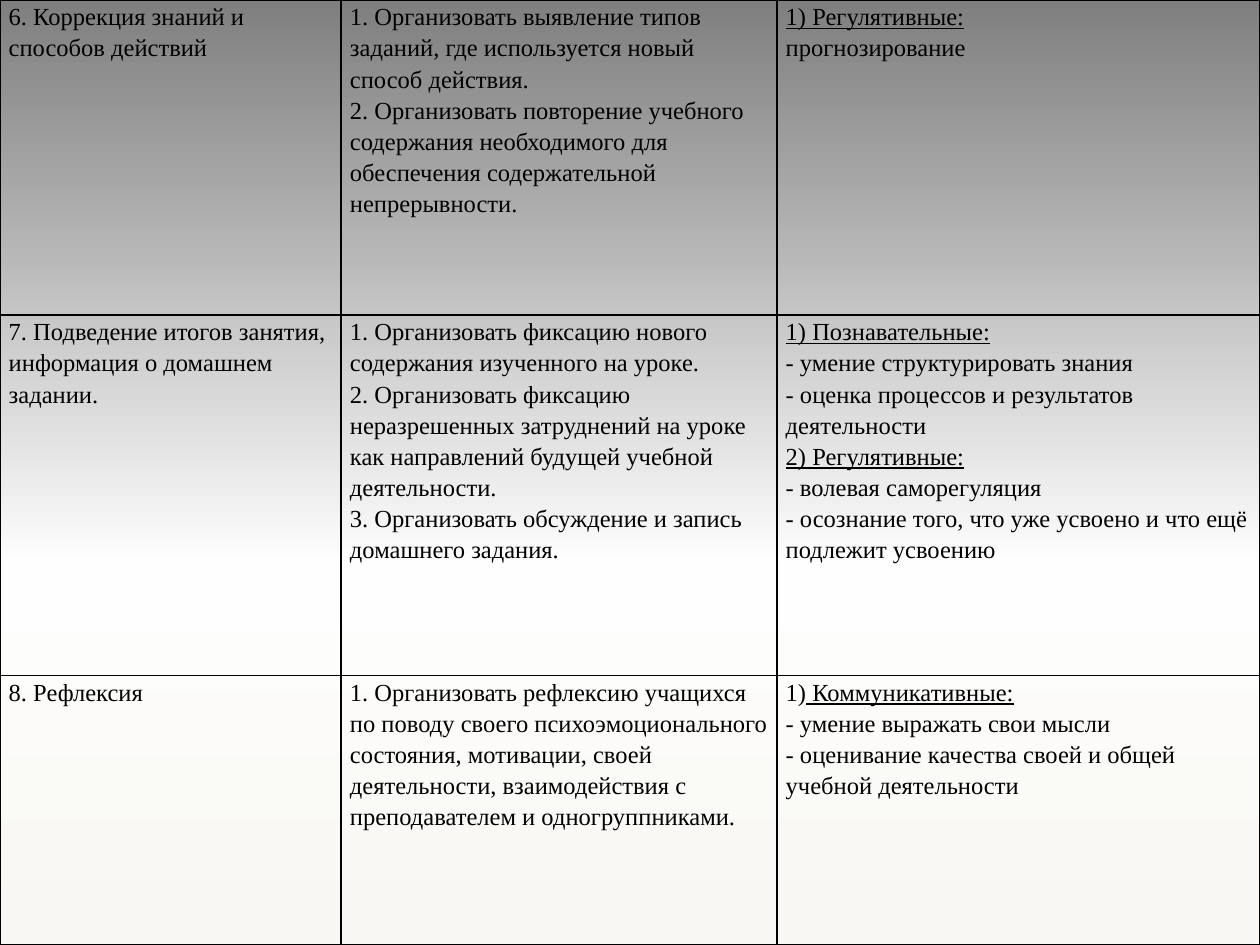
"""Builds a slide with a table of lesson stages, tasks and learning skills."""
from copy import deepcopy
from dataclasses import dataclass

from pptx import Presentation
from pptx import util as u
from pptx.dml.color import RGBColor
from pptx.oxml import parse_xml
from pptx.oxml.ns import nsdecls, qn

COLORS = {"text": "000000", "border": "000000",
          "bottom": "F8F7F3", "middle": "FEFEFE", "top": "7F7F7F"}
GRADIENT = [(0, "bottom"), (0.4, "middle"), (1, "top")]
COLUMN_WIDTHS = [195, 249, 276]
ROW_HEIGHTS = [180, 206, 154]
CELL_FORMAT = {"margin_left": u.Pt(5), "margin_right": u.Pt(5),
               "margin_top": u.Pt(0), "margin_bottom": u.Pt(0)}
FONT_FORMAT = {"name": "Times New Roman", "size": u.Pt(14)}


@dataclass
class Span:
    text: str
    underline: bool = False


@dataclass
class Stage:
    name: str
    tasks: list[str]
    skills: list[list[Span]]


def plain(text: str) -> list[Span]:
    return [Span(text)]


def heading(text: str) -> list[Span]:
    return [Span(text, True)]


STAGES = [
    Stage("6. Коррекция знаний и способов действий",
          ["1. Организовать выявление типов заданий, где используется новый способ действия.",
           "2. Организовать повторение учебного содержания необходимого для обеспечения "
           "содержательной непрерывности."],
          [heading("1) Регулятивные:"), plain("прогнозирование")]),
    Stage("7. Подведение итогов занятия, информация о домашнем задании.",
          ["1. Организовать фиксацию нового содержания изученного на уроке.",
           "2. Организовать фиксацию неразрешенных затруднений на уроке как направлений "
           "будущей учебной деятельности.",
           "3. Организовать обсуждение и запись домашнего задания."],
          [heading("1) Познавательные:"),
           plain("- умение структурировать знания"),
           plain("- оценка процессов и результатов деятельности"),
           heading("2) Регулятивные:"),
           plain("- волевая саморегуляция"),
           plain("- осознание того, что уже усвоено и что ещё подлежит усвоению")]),
    Stage("8. Рефлексия",
          ["1. Организовать рефлексию учащихся по поводу своего психоэмоционального "
           "состояния, мотивации, своей деятельности, взаимодействия с преподавателем "
           "и одногруппниками."],
          [[Span("1)"), Span(" Коммуникативные:", True)],
           plain("- умение выражать свои мысли"),
           plain("- оценивание качества своей и общей учебной деятельности")]),
]


def apply_format(target, values: dict) -> None:
    for name, value in values.items():
        setattr(target, name, value)


def paint_background(page) -> None:
    fill = page.background.fill
    fill.gradient()
    fill.gradient_angle = 90
    stop_list = page.element.find(".//" + qn("a:gsLst"))
    stop_list.append(deepcopy(stop_list[-1]))
    for stop, (position, color) in zip(fill.gradient_stops, GRADIENT):
        stop.position = position
        stop.color.rgb = RGBColor.from_string(COLORS[color])


def draw_borders(cell, width: int = 1) -> None:
    properties = cell._tc.get_or_add_tcPr()
    for side in "LRTB":
        properties.append(parse_xml(
            f'<a:ln{side} {nsdecls("a")} w="{u.Pt(width)}"><a:solidFill>'
            f'<a:srgbClr val="{COLORS["border"]}"/></a:solidFill></a:ln{side}>'))


def write_cell(cell, lines: list[list[Span]]) -> None:
    apply_format(cell, CELL_FORMAT)
    draw_borders(cell)
    cell.fill.background()
    frame = cell.text_frame
    for index, line in enumerate(lines):
        para = frame.add_paragraph() if index else frame.paragraphs[0]
        para.line_spacing = 1.15
        for part in line:
            span = para.add_run()
            span.text = part.text
            apply_format(span.font, FONT_FORMAT | {"underline": part.underline})
            span.font.color.rgb = RGBColor.from_string(COLORS["text"])


def draw_table(page, stages: list[Stage]) -> None:
    table = page.shapes.add_table(
        len(stages), len(COLUMN_WIDTHS), u.Pt(0), u.Pt(0),
        u.Pt(sum(COLUMN_WIDTHS)), u.Pt(sum(ROW_HEIGHTS))).table
    apply_format(table, {"first_row": False, "horz_banding": False})
    for column, width in zip(table.columns, COLUMN_WIDTHS):
        column.width = u.Pt(width)
    for row, height, stage in zip(table.rows, ROW_HEIGHTS, stages):
        row.height = u.Pt(height)
        contents = [[plain(stage.name)], [plain(task) for task in stage.tasks], stage.skills]
        for cell, lines in zip(row.cells, contents):
            write_cell(cell, lines)


def main() -> None:
    deck = Presentation()
    apply_format(deck, {"slide_width": u.Pt(720), "slide_height": u.Pt(540)})
    page = deck.slides.add_slide(deck.slide_layouts[6])
    paint_background(page)
    draw_table(page, STAGES)
    deck.save("out.pptx")


if __name__ == "__main__":
    main()
